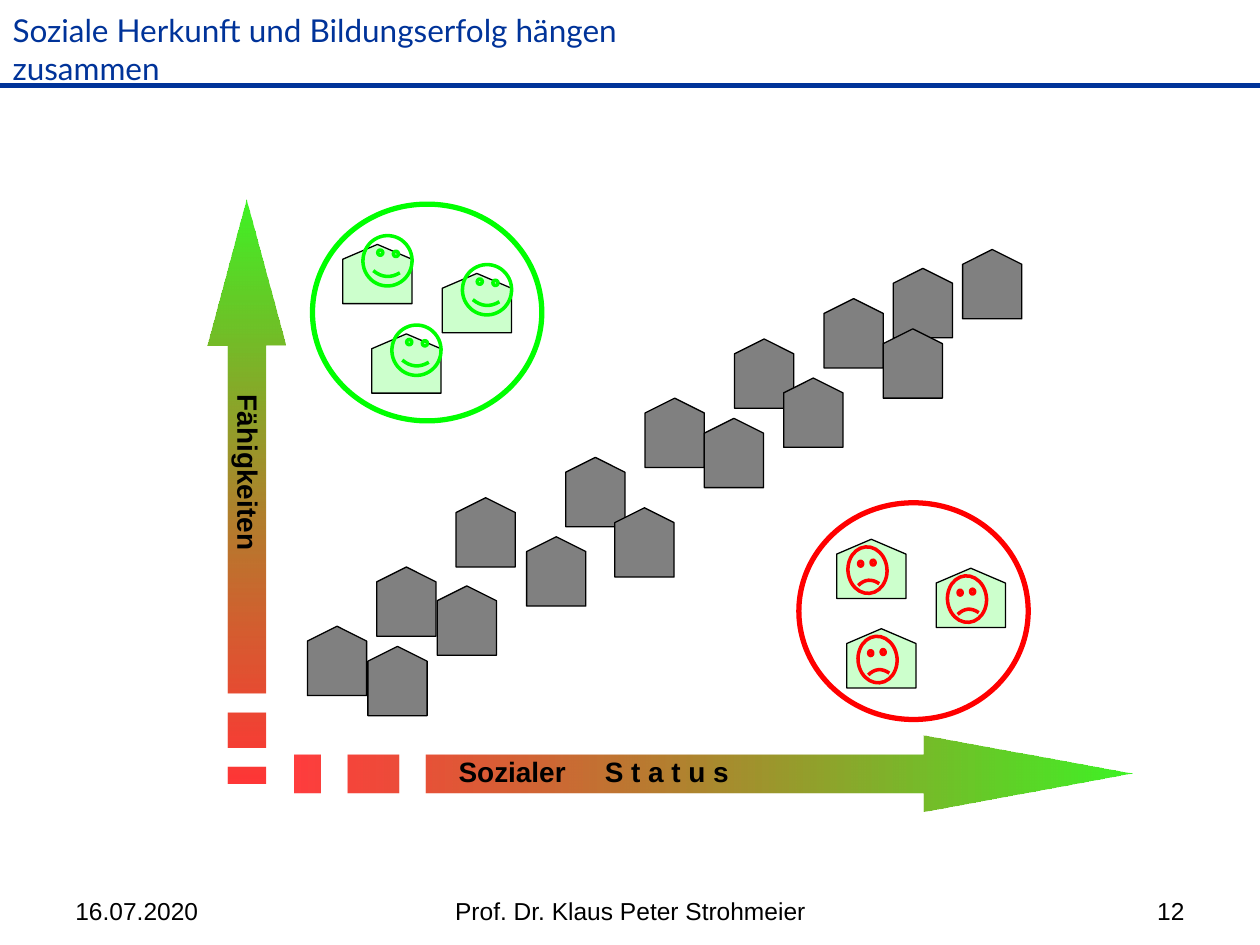
from lxml import etree
from pptx import Presentation
from pptx.dml.color import RGBColor
from pptx.enum.shapes import MSO_CONNECTOR, MSO_SHAPE
from pptx.enum.text import MSO_ANCHOR, MSO_AUTO_SIZE, PP_ALIGN
from pptx.oxml.ns import qn
from pptx.util import Inches, Pt

HOUSE, FACE, OVAL = MSO_SHAPE.PENTAGON, MSO_SHAPE.SMILEY_FACE, MSO_SHAPE.OVAL
LEFT, CENTER, RIGHT = PP_ALIGN.LEFT, PP_ALIGN.CENTER, PP_ALIGN.RIGHT
TOP, MIDDLE = MSO_ANCHOR.TOP, MSO_ANCHOR.MIDDLE
STRAIGHT, NO_FIT = MSO_CONNECTOR.STRAIGHT, MSO_AUTO_SIZE.NONE

COLORS = {
    "blue": "003399", "black": "000000", "grey": "808080", "mint": "CCFFCC",
    "red": "FF0000", "green": "00FF00", "peak": "3EF325",
}
FONTS = {
    "title": {"name": "Lato", "size": Pt(18), "bold": False},
    "footer": {"name": "Arial", "size": Pt(14), "bold": False},
    "axis": {"name": "Arial", "size": Pt(16), "bold": True},
}
MARGINS = ("margin_left", "margin_top", "margin_right", "margin_bottom")

GREY_HOUSES = [
    (2.44, 4.97), (2.99, 4.5), (3.62, 3.95), (4.49, 3.63), (5.12, 3.16), (5.83, 2.69),
    (6.54, 2.37), (7.09, 2.13), (2.92, 5.13), (3.47, 4.65), (4.18, 4.26), (4.88, 4.03),
    (5.59, 3.32), (6.22, 3), (7.01, 2.61), (7.64, 1.98),
]
OUTLIERS = [
    {"color": "red", "oval": (6.34, 3.99), "houses": [(6.64, 4.28), (6.72, 4.99), (7.43, 4.51)],
     "offset": (0.09, 0.06), "face": (0.31, 0.37), "tilt": 355, "smile": -0.047},
    {"color": "green", "oval": (2.48, 1.62), "houses": [(3.51, 2.17), (2.95, 2.65), (2.72, 1.94)],
     "offset": (0.16, -0.07), "face": (0.39, 0.4), "tilt": 4.6, "smile": 0.047},
]


class SlideBuilder:
    """Holds the slide and its style and draws each kind of element."""

    def __init__(self, slide):
        self.slide = slide
        self.shapes = slide.shapes

    def color(self, name):
        return RGBColor.from_string(COLORS[name])

    def set_text(self, frame, text, style, color="black", align=LEFT, anchor=TOP,
                 margins=(0.1, 0.05, 0.1, 0.05), tab=None, spacing=None):
        settings = {"word_wrap": True, "auto_size": NO_FIT, "vertical_anchor": anchor}
        settings.update(zip(MARGINS, map(Inches, margins)))
        for key, value in settings.items():
            setattr(frame, key, value)
        paragraph = frame.paragraphs[0]
        if tab:
            tabs = etree.SubElement(paragraph._p.get_or_add_pPr(), qn("a:tabLst"))
            etree.SubElement(tabs, qn("a:tab"), pos=str(Inches(tab)), algn="l")
        paragraph.alignment = align
        paragraph.space_before = Pt(0)
        paragraph.line_spacing = spacing
        run = paragraph.add_run()
        run.text = text
        for key, value in FONTS[style].items():
            setattr(run.font, key, value)
        run.font.color.rgb = self.color(color)

    def title(self, text, *box):
        title = self.shapes.title
        for key, value in zip(("left", "top", "width", "height"), box):
            setattr(title, key, Inches(value))
        self.set_text(title.text_frame, text, "title", "blue", anchor=MIDDLE)

    def label(self, text, left, width, align):
        box = self.shapes.add_textbox(Inches(left), Inches(7.06), Inches(width), Inches(0.29))
        self.set_text(box.text_frame, text, "footer", align=align)

    def rule(self, top):
        rule = self.shapes.add_connector(STRAIGHT, Inches(10), Inches(top), 0, Inches(top))
        rule.line.color.rgb = self.color("blue")
        rule.line.width = Pt(3)
        etree.SubElement(rule._element.spPr, qn("a:effectLst"))

    def preset(self, group, kind, box, line, weight, fill=None, turn=0, adjust=None):
        shape = group.shapes.add_shape(kind, *map(Inches, box))
        shape.shadow.inherit = False
        shape.rotation = turn
        if adjust is not None:
            shape.adjustments[0] = adjust
        if fill:
            shape.fill.solid()
            shape.fill.fore_color.rgb = self.color(fill)
        else:
            shape.fill.background()
        shape.line.color.rgb = self.color(line)
        shape.line.width = Pt(weight)

    def house(self, group, left, top, width, height, fill):
        shift = (width - height) / 2
        box = (left + shift, top - shift, height, width)
        self.preset(group, HOUSE, box, "black", 0.75, fill, 270, 0.25)

    def outliers(self, color, oval, houses, offset, face, tilt, smile):
        group = self.shapes.add_group_shape()
        self.preset(group, OVAL, (*oval, 1.82, 1.72), color, 3)
        for left, top in houses:
            self.house(group, left, top, 0.55, 0.47, "mint")
            box = (left + offset[0], top + offset[1], *face)
            self.preset(group, FACE, box, color, 2, turn=tilt, adjust=smile)

    def arrow(self, left, top, blocks, shaft, neck, tip, width, inset, alpha, turn=0):
        low, high = inset, width - inset
        head = [(neck, 0), (neck, low), (shaft, low), (shaft, high), (neck, high),
                (neck, width), (tip, width / 2)]
        contours = [head] + [[(a, low), (a, high), (b, high), (b, low)] for a, b in blocks]
        outlines = [[(Inches(left + x), Inches(top + y)) for x, y in points] for points in contours]
        builder = self.shapes.build_freeform(*outlines[0][0])
        builder.add_line_segments(outlines[0][1:])
        for outline in outlines[1:]:
            builder.move_to(*outline[0])
            builder.add_line_segments(outline[1:])
        arrow = builder.convert_to_shape()
        arrow.shadow.inherit = False
        arrow.rotation = turn
        arrow.line.fill.background()
        arrow.fill.gradient()
        arrow.fill.gradient_angle = 0
        for stop, name in zip(arrow.fill.gradient_stops, ("red", "peak")):
            stop.color.rgb = self.color(name)
        start = arrow._element.spPr.find(".//" + qn("a:srgbClr"))
        etree.SubElement(start, qn("a:alpha"), val=str(alpha * 1000))
        return arrow.text_frame


def main():
    presentation = Presentation()
    presentation.slide_width, presentation.slide_height = Inches(10), Inches(7.5)
    builder = SlideBuilder(presentation.slides.add_slide(presentation.slide_layouts[5]))
    builder.rule(0.68)
    builder.label("16.07.2020", 0.5, 2.33, LEFT)
    builder.label("Prof. Dr. Klaus Peter Strohmeier", 3.42, 3.17, CENTER)
    builder.label("12", 7.17, 2.33, RIGHT)
    builder.title("Soziale Herkunft und Bildungserfolg hängen zusammen", 0, 0, 6.18, 0.78)

    ability = builder.arrow(-0.36, 3.59, [(0.29, 0.57), (0, 0.14)], 0.72, 3.47, 4.63,
                            0.62, 0.16, 79, turn=270)
    ability._txBody.bodyPr.set("rot", "10800000")
    builder.set_text(ability, "Fähigkeiten", "axis", align=CENTER, anchor=MIDDLE,
                     margins=(0.07, 0.07, 0.37, 0.07), spacing=0.9)
    status = builder.arrow(2.34, 5.84, [(0.42, 0.83), (0, 0.21)], 1.04, 4.99, 6.65,
                           0.6, 0.15, 76)
    builder.set_text(status, "Sozialer\tS t a t u s", "axis", anchor=MIDDLE,
                     margins=(1.3, 0.07, 0.22, 0.07), tab=1.16, spacing=0.9)

    neighbourhood = builder.shapes.add_group_shape()
    for left, top in GREY_HOUSES:
        builder.house(neighbourhood, left, top, 0.47, 0.55, "grey")
    for outliers in OUTLIERS:
        builder.outliers(**outliers)
    presentation.save("out.pptx")


if __name__ == "__main__":
    main()
